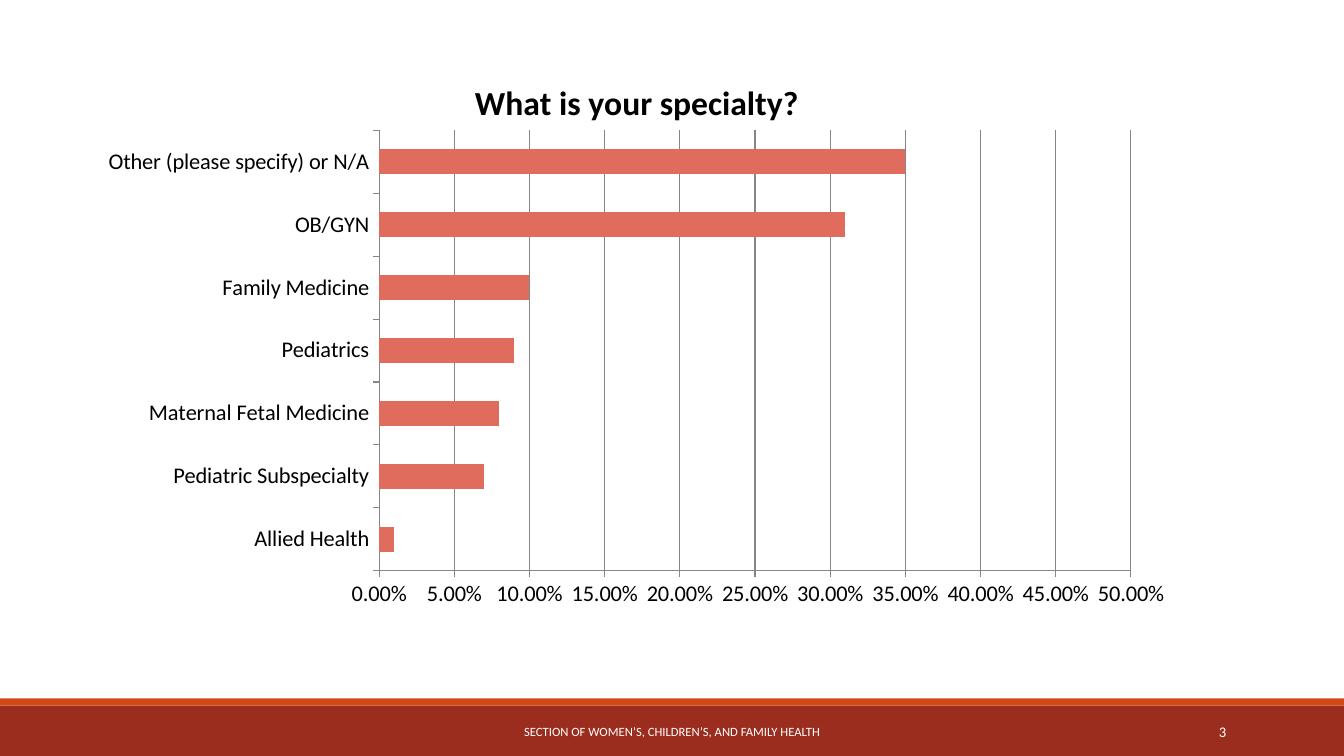
from dataclasses import dataclass

from lxml import etree
from pptx import Presentation
from pptx.chart.data import CategoryChartData
from pptx.dml.color import RGBColor
from pptx.enum.chart import XL_CHART_TYPE, XL_TICK_MARK
from pptx.enum.shapes import MSO_SHAPE
from pptx.enum.text import MSO_ANCHOR, PP_ALIGN
from pptx.oxml.ns import qn
from pptx.util import Inches, Pt

FONT = "Calibri"
BLACK, WHITE, GRAY = "000000", "FFFFFF", "868686"
BAR_COLOR = "DF6C5D"


@dataclass
class Area:
    left: float
    top: float
    width: float
    height: float

    def lengths(self) -> list:
        return [Inches(n) for n in (self.left, self.top, self.width, self.height)]


@dataclass
class Band:
    area: Area
    color: str


@dataclass
class FooterText:
    text: str
    area: Area
    size: float
    align: PP_ALIGN


BANDS = [
    Band(Area(0, 7, 13.33, 0.5), "9B2D1F"),
    Band(Area(0, 6.93, 13.33, 0.07), "D34817"),
]
FOOTER_TEXTS = [
    FooterText("3", Area(10.83, 7.06, 1.43, 0.4), 10.5, PP_ALIGN.RIGHT),
    FooterText("SECTION OF WOMEN’S, CHILDREN’S, AND FAMILY HEALTH",
               Area(4.03, 7.06, 5.27, 0.4), 9, PP_ALIGN.CENTER),
]
CHART_AREA = Area(0.88, 0.57, 10.87, 5.53)
PLOT_FRACTIONS = Area(0.265, 0.131, 0.686, 0.79)
SPECIALTIES = {
    "Allied Health": 0.01,
    "Pediatric Subspecialty": 0.07,
    "Maternal Fetal Medicine": 0.08,
    "Pediatrics": 0.09,
    "Family Medicine": 0.1,
    "OB/GYN": 0.31,
    "Other (please specify) or N/A": 0.35,
}


def rgb(color: str) -> RGBColor:
    return RGBColor.from_string(color)


def format_font(font, *, size: float, color: str = BLACK, bold: bool = False) -> None:
    font.name = FONT
    font.size = Pt(size)
    font.bold = bold
    font.color.rgb = rgb(color)


def format_line(line, color: str = GRAY) -> None:
    line.color.rgb = rgb(color)
    line.width = Pt(0.75)


def add_band(page, band: Band) -> None:
    shape = page.shapes.add_shape(MSO_SHAPE.RECTANGLE, *band.area.lengths())
    shape.shadow.inherit = False
    shape.fill.solid()
    shape.fill.fore_color.rgb = rgb(band.color)
    shape.line.fill.background()


def add_text(page, text: str, area: Area, *, size: float, color: str,
             align: PP_ALIGN) -> None:
    frame = page.shapes.add_textbox(*area.lengths()).text_frame
    frame.word_wrap = True
    frame.vertical_anchor = MSO_ANCHOR.MIDDLE
    para = frame.paragraphs[0]
    para.alignment = align
    span = para.add_run()
    span.text = text
    format_font(span.font, size=size, color=color)


def place_plot(chart, fractions: Area) -> None:
    """Fix the inner plot area as fractions of the chart frame."""
    plot_area = chart.plots[0]._element.getparent()
    for layout in plot_area.findall(qn("c:layout")):
        plot_area.remove(layout)
    layout = etree.Element(qn("c:layout"))
    plot_area.insert(0, layout)
    manual = etree.SubElement(layout, qn("c:manualLayout"))
    settings = {
        "layoutTarget": "inner", "xMode": "edge", "yMode": "edge",
        "x": fractions.left, "y": fractions.top,
        "w": fractions.width, "h": fractions.height,
    }
    for name, value in settings.items():
        etree.SubElement(manual, qn(f"c:{name}")).set("val", str(value))


def add_specialty_chart(page) -> None:
    data = CategoryChartData(number_format="0.00%")
    data.categories = list(SPECIALTIES)
    data.add_series("Series 1", list(SPECIALTIES.values()))
    chart = page.shapes.add_chart(
        XL_CHART_TYPE.BAR_CLUSTERED, *CHART_AREA.lengths(), data).chart
    format_font(chart.font, size=10)
    chart.has_legend = False

    chart.has_title = True
    title = chart.chart_title
    title.include_in_layout = False
    span = title.text_frame.paragraphs[0].add_run()
    span.text = "What is your specialty?"
    format_font(span.font, size=24, bold=True)

    plot = chart.plots[0]
    plot.gap_width = 150
    plot.vary_by_categories = False
    fill = plot.series[0].format.fill
    fill.solid()
    fill.fore_color.rgb = rgb(BAR_COLOR)

    for axis in (chart.category_axis, chart.value_axis):
        axis.major_tick_mark = XL_TICK_MARK.OUTSIDE
        axis.minor_tick_mark = XL_TICK_MARK.NONE
        format_font(axis.tick_labels.font, size=16)
        format_line(axis.format.line)
    chart.category_axis.has_major_gridlines = False
    percent_axis = chart.value_axis
    percent_axis.minimum_scale = 0
    percent_axis.maximum_scale = 0.5
    percent_axis.major_unit = 0.05
    percent_axis.has_major_gridlines = True
    format_line(percent_axis.major_gridlines.format.line)
    percent_axis.tick_labels.number_format = "0.00%"
    percent_axis.tick_labels.number_format_is_linked = False
    place_plot(chart, PLOT_FRACTIONS)


def main() -> None:
    deck = Presentation()
    deck.slide_width, deck.slide_height = Inches(13.33), Inches(7.5)
    page = deck.slides.add_slide(deck.slide_layouts[6])
    for band in BANDS:
        add_band(page, band)
    for item in FOOTER_TEXTS:
        add_text(page, item.text, item.area, size=item.size, color=WHITE,
                 align=item.align)
    add_specialty_chart(page)
    deck.save("out.pptx")


if __name__ == "__main__":
    main()
